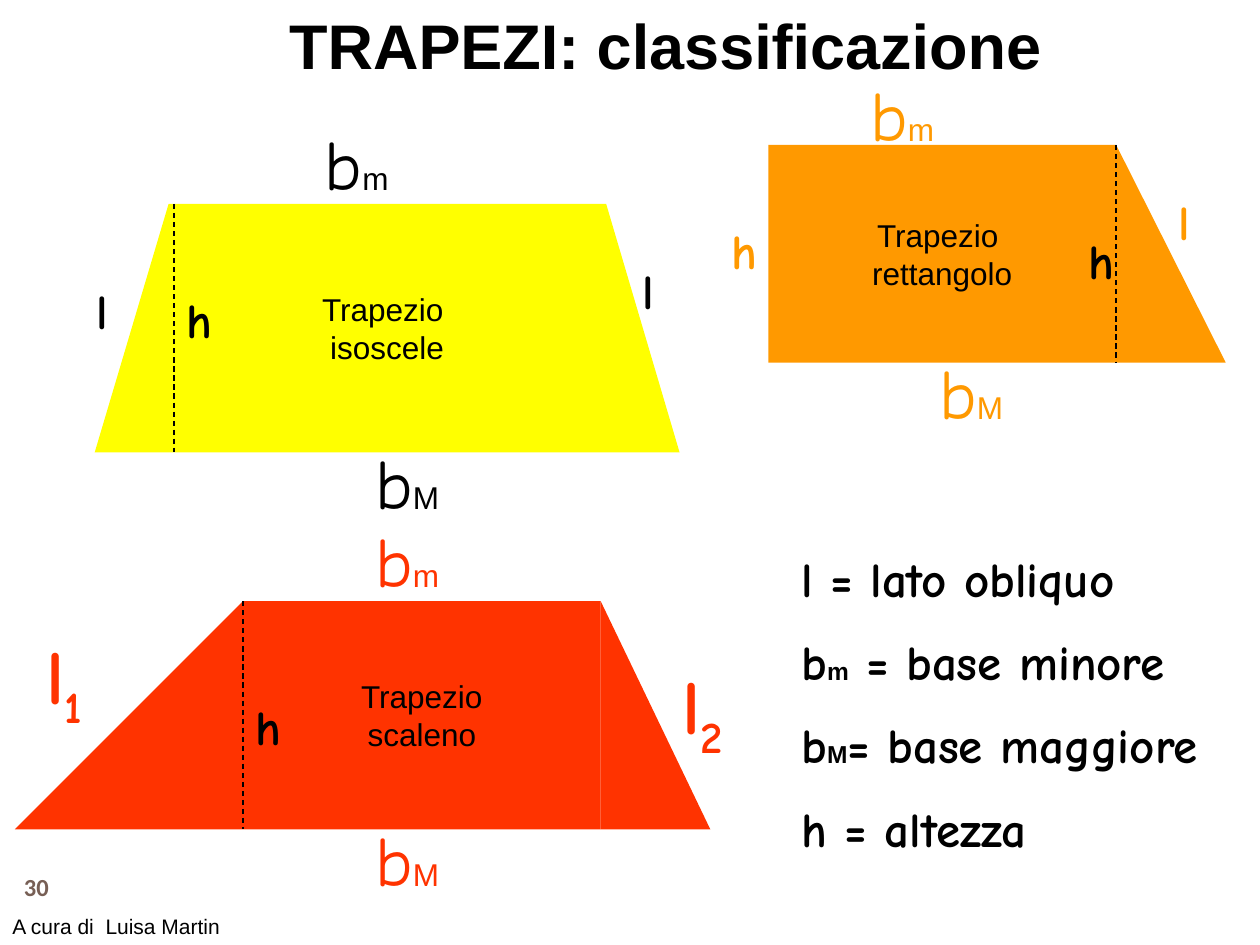
from dataclasses import dataclass

from lxml.etree import SubElement
from pptx import Presentation
from pptx.dml.color import RGBColor
from pptx.enum.dml import MSO_LINE
from pptx.enum.shapes import MSO_CONNECTOR, MSO_SHAPE
from pptx.enum.text import MSO_ANCHOR, MSO_AUTO_SIZE, PP_ALIGN
from pptx.oxml import parse_xml
from pptx.oxml.ns import nsdecls, qn
from pptx.util import Cm, Pt


@dataclass(frozen=True)
class Theme:
    black: str = "000000"
    yellow: str = "FFFF00"
    orange: str = "FF9900"
    red: str = "FF3300"
    brown: str = "775F55"
    sans: str = "Arial"
    hand: str = "Comic Neue"
    number: str = "Calibri"
    title: int = 36
    side: int = 44
    base: int = 40
    letter: int = 28
    name: int = 18
    small: int = 14
    credit: int = 12


def write_text(tf, paragraphs, align=None, spaced=True, **fmt):
    """Fill tf; a paragraph is a string or a list of (text, format overrides)."""
    for i, runs in enumerate(paragraphs):
        p = tf.paragraphs[0] if i == 0 else tf.add_paragraph()
        p.alignment = align
        if spaced:
            p._p.get_or_add_pPr().insert(0, parse_xml(
                f'<a:spcBef {nsdecls("a")}><a:spcPct val="50000"/></a:spcBef>'))
        for text, extra in [(runs, {})] if isinstance(runs, str) else runs:
            style = {**fmt, **extra}
            r = p.add_run()
            r.text = text
            r.font.size = Pt(style["size"])
            r.font.name = style["font"]
            r.font.bold = style.get("bold", False)
            r.font.color.rgb = RGBColor.from_string(style["color"])
            if style.get("subscript"):
                r._r.get_or_add_rPr().set("baseline", "-25000")


class TrapeziumSlide:
    """Draws on one slide; all lengths are in centimetres."""

    def __init__(self, prs, theme):
        self.theme = theme
        self.slide = prs.slides.add_slide(prs.slide_layouts[1])

    def place(self, sp, x, y, w, h):
        sp.left, sp.top, sp.width, sp.height = map(Cm, (x, y, w, h))

    def title(self, text, *box):
        t, sp = self.theme, self.slide.shapes.title
        self.place(sp, *box)
        tf = sp.text_frame
        tf.vertical_anchor, tf.auto_size = MSO_ANCHOR.TOP, MSO_AUTO_SIZE.NONE
        write_text(tf, [text], align=PP_ALIGN.CENTER, size=t.title,
                   font=t.sans, color=t.black, bold=True)

    def legend(self, paragraphs, *box):
        t, sp = self.theme, self.slide.placeholders[1]
        self.place(sp, *box)
        tf = sp.text_frame
        tf.auto_size = MSO_AUTO_SIZE.NONE
        write_text(tf, paragraphs, size=t.letter, font=t.hand,
                   color=t.black, bold=True)
        for p in tf.paragraphs:
            pPr = p._p.get_or_add_pPr()
            pPr.set("marL", "0")
            pPr.set("indent", "0")
            SubElement(pPr, qn("a:buNone"))

    def text(self, paragraphs, x, y, w, h, anchor=MSO_ANCHOR.TOP, **fmt):
        tf = self.slide.shapes.add_textbox(*map(Cm, (x, y, w, h))).text_frame
        tf.word_wrap, tf.vertical_anchor = True, anchor
        if anchor == MSO_ANCHOR.TOP:
            tf.auto_size = MSO_AUTO_SIZE.SHAPE_TO_FIT_TEXT
        write_text(tf, paragraphs, **fmt)

    def letter(self, char, x, y, color):
        t = self.theme
        self.text([char], x, y, 0.99, 1.45, size=t.letter, font=t.hand,
                  color=color, bold=True)

    def base(self, sub, x, y, color):
        t = self.theme
        runs = [("b", {}), (sub, dict(size=t.name, font=t.sans))]
        self.text([runs], x, y, 3, 1.96, size=t.base, font=t.hand, color=color)

    def side(self, index, x, y, w, color):
        t = self.theme
        self.text([[("l", {}), (index, dict(subscript=True))]], x, y, w, 2.13,
                  size=t.side, font=t.hand, color=color, bold=True)

    def finish(self, sp, color, lines=()):
        t = self.theme
        sp.shadow.inherit = False
        sp.fill.solid()
        sp.fill.fore_color.rgb = RGBColor.from_string(color)
        sp.line.fill.background()
        tf = sp.text_frame
        tf.word_wrap, tf.vertical_anchor = False, MSO_ANCHOR.MIDDLE
        write_text(tf, lines, align=PP_ALIGN.CENTER, spaced=False,
                   size=t.name, font=t.sans, color=t.black)

    def polygon(self, points, color, lines):
        start, *rest = [(Cm(x), Cm(y)) for x, y in points]
        builder = self.slide.shapes.build_freeform(*start)
        builder.add_line_segments(rest, close=True)
        self.finish(builder.convert_to_shape(), color, lines)

    def rectangle(self, x, y, w, h, color, lines):
        sp = self.slide.shapes.add_shape(MSO_SHAPE.RECTANGLE, *map(Cm, (x, y, w, h)))
        self.finish(sp, color, lines)

    def triangle(self, x, y, w, h, color, flip=False):
        sp = self.slide.shapes.add_shape(MSO_SHAPE.RIGHT_TRIANGLE,
                                         *map(Cm, (x, y, w, h)))
        if flip:
            sp._element.spPr.xfrm.set("flipH", "1")
        self.finish(sp, color)

    def height(self, x, top, bottom):
        line = self.slide.shapes.add_connector(
            MSO_CONNECTOR.STRAIGHT, *map(Cm, (x, top, x, bottom)))
        line.line.color.rgb = RGBColor.from_string(self.theme.black)
        line.line.width = Pt(0.75)
        line.line.dash_style = MSO_LINE.DASH
        SubElement(line._element.spPr, qn("a:effectLst"))


def main():
    prs = Presentation()
    prs.slide_width, prs.slide_height = Cm(25.4), Cm(19.05)
    t = Theme()
    s = TrapeziumSlide(prs, t)
    s.title("TRAPEZI: classificazione", 5.11, 0, 16.61, 1.78)

    # Isosceles
    top, bottom = 4.11, 9.12
    s.polygon([(13.7, bottom), (12.22, top), (3.4, top), (1.91, bottom)],
              t.yellow, ["Trapezio ", "isoscele"])
    s.height(3.51, top, bottom)

    # Right-angled
    x, y, w, h = 15.49, 2.92, 7.01, 4.39
    s.rectangle(x, y, w, h, t.orange, ["Trapezio ", "rettangolo"])
    s.triangle(x + w, y, 2.21, h, t.orange)
    s.height(x + w, y, y + h)

    # Scalene
    x, y, w, h = 4.9, 12.12, 7.21, 4.6
    s.rectangle(x, y, w, h, t.red, ["Trapezio", "scaleno"])
    s.triangle(x + w, y, 2.21, h, t.red)
    s.triangle(x - h, y, h, h, t.red, flip=True)
    s.height(x, y, y + h)

    for sub, x, y, color in [
        ("m", 6.3, 2.31, t.black), ("M", 7.32, 8.74, t.black),
        ("m", 17.3, 1.32, t.orange), ("M", 18.69, 6.93, t.orange),
        ("m", 7.32, 10.31, t.red), ("M", 7.32, 16.33, t.red),
    ]:
        s.base(sub, x, y, color)
    for char, x, y, color in [
        ("l", 1.7, 5.54, t.black), ("l", 12.7, 5.13, t.black),
        ("l", 23.5, 3.73, t.orange), ("h", 14.5, 4.32, t.orange),
        ("h", 3.51, 5.72, t.black), ("h", 21.69, 4.52, t.black),
        ("h", 4.9, 13.92, t.black),
    ]:
        s.letter(char, x, y, color)
    s.side("1", 0.69, 12.52, 1.6, t.red)
    s.side("2", 13.51, 13.13, 1.8, t.red)

    sub = dict(size=t.small, font=t.sans)
    s.legend(["l = lato obliquo",
              [("b", {}), ("m", sub), (" = base minore", {})],
              [("b", {}), ("M", sub), ("= base maggiore", {})],
              "h = altezza"], 15.9, 10.92, 8.61, 6.78)
    s.text(["30"], 0, 17.35, 1.47, 1.07, anchor=MSO_ANCHOR.MIDDLE, spaced=False,
           align=PP_ALIGN.CENTER, size=t.small, font=t.number,
           color=t.brown, bold=True)
    s.text(["A cura di  Luisa Martin"], 0, 18.29, 4.8, 0.76,
           size=t.credit, font=t.sans, color=t.black)
    prs.save("out.pptx")


if __name__ == "__main__":
    main()
